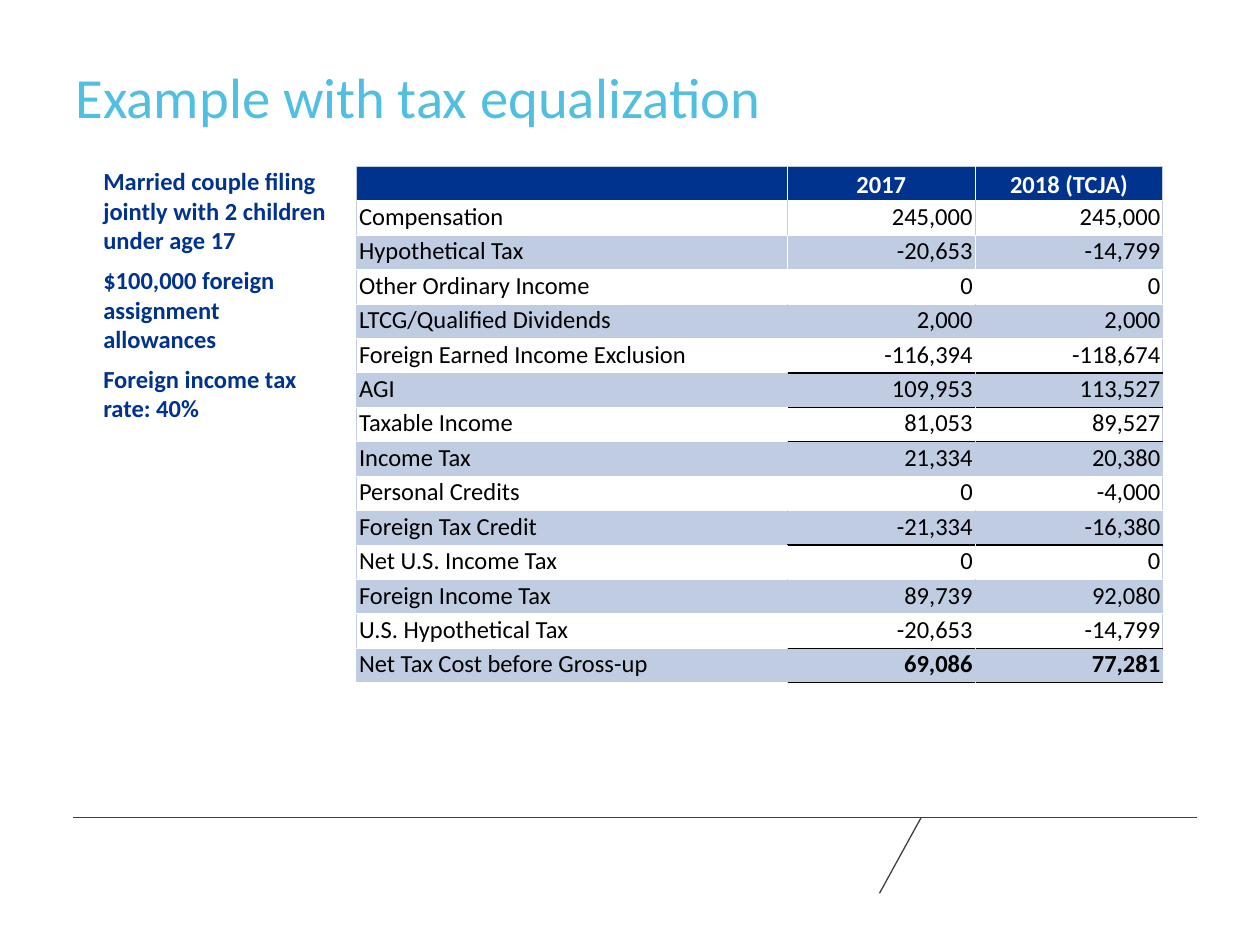
from typing import NamedTuple

from lxml import etree
from pptx import Presentation
from pptx import util as u
from pptx.dml import color
from pptx.enum import shapes, text
from pptx.oxml import ns

Inches = u.Inches
FONT = "Calibri"
HUES = {
    "title": "51BFE1",
    "navy": "00338D",
    "tint": "BFCCE2",
    "white": "FFFFFF",
    "black": "000000",
    "rule": "3F3F42",
}
ALIGN = text.PP_ALIGN


class Row(NamedTuple):
    label: str
    old: str
    new: str
    ruled: bool = False  # black line below the amounts
    bold: bool = False


class Line(NamedTuple):
    x1: float
    y1: float
    x2: float
    y2: float


ROWS = [
    Row("", "2017", "2018 (TCJA)", bold=True),
    Row("Compensation", "245,000", "245,000"),
    Row("Hypothetical Tax", "-20,653", "-14,799"),
    Row("Other Ordinary Income", "0", "0"),
    Row("LTCG/Qualified Dividends", "2,000", "2,000"),
    Row("Foreign Earned Income Exclusion", "-116,394", "-118,674", ruled=True),
    Row("AGI", "109,953", "113,527", ruled=True),
    Row("Taxable Income", "81,053", "89,527", ruled=True),
    Row("Income Tax", "21,334", "20,380"),
    Row("Personal Credits", "0", "-4,000"),
    Row("Foreign Tax Credit", "-21,334", "-16,380", ruled=True),
    Row("Net U.S. Income Tax", "0", "0"),
    Row("Foreign Income Tax", "89,739", "92,080"),
    Row("U.S. Hypothetical Tax", "-20,653", "-14,799", ruled=True),
    Row("Net Tax Cost before Gross-up", "69,086", "77,281", ruled=True, bold=True),
]
COLS = [3.42, 1.49, 1.49]
HEIGHT = 4.1
NOTES = [
    "Married couple filing jointly with 2 children under age 17",
    "$100,000 foreign assignment allowances",
    "Foreign income tax rate: 40%",
]
LINES = [Line(0.58, 6.49, 9.5, 6.49), Line(6.98, 7.09, 7.31, 6.49)]


def rgb(name: str) -> color.RGBColor:
    return color.RGBColor.from_string(HUES[name])


def write(para, words: str, *, size: float = 14, hue: str = "black",
          bold: bool = False, align=ALIGN.LEFT, after: float = 0) -> None:
    para.alignment = align
    para.space_after = u.Pt(after)
    if not words:
        # An empty paragraph takes its height from its end mark.
        end = etree.SubElement(para._p, ns.qn("a:endParaRPr"))
        end.set("sz", str(int(size * 100)))
        return
    run = para.add_run()
    run.text = words
    run.font.name = FONT
    run.font.size = u.Pt(size)
    run.font.bold = bold
    run.font.color.rgb = rgb(hue)


def edge(cell, side: str, hue: str, width: float = 0.5) -> None:
    """Add one cell border; call in the order L, R, T, B, before the fill."""
    line = etree.SubElement(cell._tc.get_or_add_tcPr(), ns.qn(f"a:ln{side}"))
    line.set("w", str(u.Pt(width)))
    fill = etree.SubElement(line, ns.qn("a:solidFill"))
    etree.SubElement(fill, ns.qn("a:srgbClr")).set("val", HUES[hue])


def border(cell, r: int, c: int) -> None:
    inner = "tint" if r == 1 or (r > 2 and r % 2 == 0) else "white"
    edge(cell, "L", "tint" if c == 0 else inner)
    edge(cell, "R", "tint" if c == len(COLS) - 1 else inner)
    for side, above in (("T", r - 1), ("B", r)):
        if above >= 0 and c > 0 and ROWS[above].ruled:
            edge(cell, side, "black", 1)
        else:
            edge(cell, side, "tint" if above < 0 else "white")


def draw_cell(cell, r: int, c: int, row: Row) -> None:
    head = r == 0
    cell.margin_left = cell.margin_right = Inches(0.02)
    cell.margin_top = cell.margin_bottom = Inches(0.01)
    cell.vertical_anchor = text.MSO_ANCHOR.BOTTOM if head else text.MSO_ANCHOR.TOP
    border(cell, r, c)
    if head or r % 2 == 0:
        cell.fill.solid()
        cell.fill.fore_color.rgb = rgb("navy" if head else "tint")
    else:
        cell.fill.background()
    side = ALIGN.CENTER if head else ALIGN.RIGHT
    write(cell.text_frame.paragraphs[0], (row.label, row.old, row.new)[c],
          hue="white" if head else "black", bold=row.bold and c > 0,
          align=side if c else ALIGN.LEFT)


def draw_table(slide) -> None:
    frame = slide.shapes.add_table(len(ROWS), len(COLS), Inches(2.83), Inches(1.32),
                                   Inches(sum(COLS)), Inches(HEIGHT))
    table = frame.table
    table.first_row = table.horz_banding = False
    for col, width in zip(table.columns, COLS):
        col.width = Inches(width)
    for r, row in enumerate(ROWS):
        table.rows[r].height = Inches(HEIGHT / len(ROWS))
        for c in range(len(COLS)):
            draw_cell(table.cell(r, c), r, c, row)


def draw_line(slide, line: Line) -> None:
    join = slide.shapes.add_connector(shapes.MSO_CONNECTOR.STRAIGHT,
                                      *(Inches(n) for n in line))
    join.line.color.rgb = rgb("rule")
    join.line.width = u.Pt(0.75)
    etree.SubElement(join._element.spPr, ns.qn("a:effectLst"))


def draw_title(slide) -> None:
    title = slide.shapes.title
    title.left, title.top = Inches(0.5), Inches(0.5)
    title.width, title.height = Inches(5.75), Inches(1.16)
    frame = title.text_frame
    frame.word_wrap = True
    frame.auto_size = text.MSO_AUTO_SIZE.NONE
    frame.vertical_anchor = text.MSO_ANCHOR.TOP
    para = frame.paragraphs[0]
    para.line_spacing = 0.9
    write(para, "Example with tax equalization", size=32.4, hue="title")


def draw_notes(slide) -> None:
    box = slide.shapes.add_textbox(Inches(0.82), Inches(1.32), Inches(1.83), Inches(2.05))
    frame = box.text_frame
    frame.word_wrap = True
    frame.auto_size = text.MSO_AUTO_SIZE.SHAPE_TO_FIT_TEXT
    frame.margin_left = frame.margin_right = frame.margin_top = frame.margin_bottom = 0
    for i, note in enumerate(NOTES):
        para = frame.add_paragraph() if i else frame.paragraphs[0]
        write(para, note, hue="navy", bold=True, after=6)


def main() -> None:
    deck = Presentation()
    deck.slide_width, deck.slide_height = Inches(10), Inches(7.5)
    slide = deck.slides.add_slide(deck.slide_layouts[5])
    for line in LINES:
        draw_line(slide, line)
    draw_title(slide)
    draw_notes(slide)
    draw_table(slide)
    deck.save("out.pptx")


if __name__ == "__main__":
    main()
